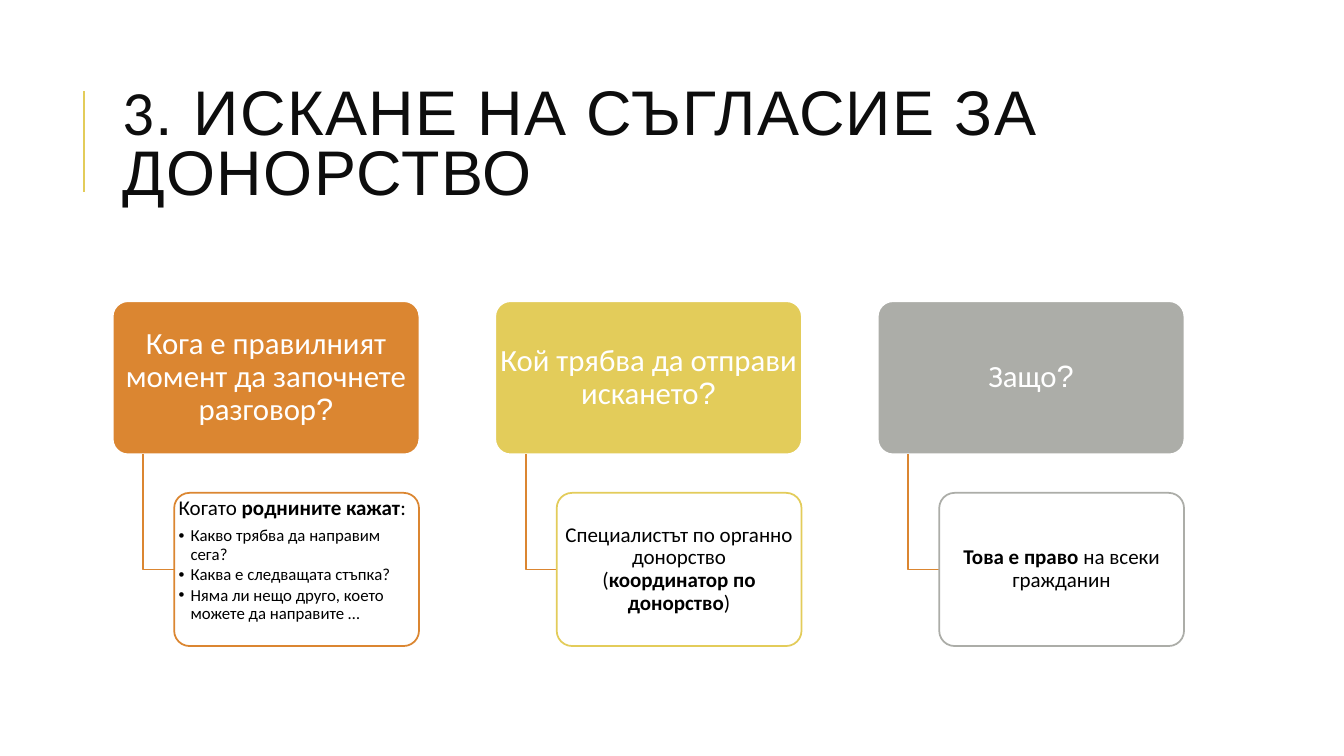
from lxml.etree import SubElement
from pptx import Presentation
from pptx.dml.color import RGBColor
from pptx.enum.shapes import MSO_CONNECTOR as Connector, MSO_SHAPE as Shape
from pptx.enum.text import MSO_ANCHOR as Anchor, PP_ALIGN as Align
from pptx.oxml.ns import qn
from pptx.util import Cm, Pt

ORANGE, YELLOW, GRAY = "DB8631", "E3CC5A", "ACADA8"
WHITE, BLACK, INK = "FFFFFF", "000000", "0D0D0D"
LEFT, PITCH = 2.84, 9.64
HEAD_TOP, HEAD_WIDTH, BOX_HEIGHT = 7.59, 7.73, 3.86
DETAIL_TOP, DETAIL_WIDTH, DETAIL_SHIFT, ELBOW_SHIFT = 12.42, 6.17, 1.55, 0.77

HEAD = {"size": Pt(22), "name": "Calibri"}
HEAD_MARK = {"size": Pt(22), "name": "Arial"}
DETAIL = {"size": Pt(15), "name": "Calibri"}
STRONG = {**DETAIL, "bold": True}
ITEM = {"size": Pt(12), "name": "Calibri"}
CENTERED = {"alignment": Align.CENTER, "line_spacing": 0.9}
INTRO = {"alignment": Align.LEFT, "line_spacing": 0.9, "space_after": Pt(5.25)}
BULLET = {"alignment": Align.LEFT, "line_spacing": 0.9, "space_after": Pt(1.8), "level": 1}

COLUMNS = [
    (ORANGE, "Кога е правилният момент да започнете разговор", Anchor.TOP, [
        (INTRO, [("Когато ", DETAIL), ("роднините кажат", STRONG), (":", DETAIL)]),
        (BULLET, [("Какво трябва да направим сега?", ITEM)]),
        (BULLET, [("Каква е следващата стъпка?", ITEM)]),
        (BULLET, [("Няма ли нещо друго, което можете да направите …", ITEM)]),
    ]),
    (YELLOW, "Кой трябва да отправи искането", Anchor.MIDDLE, [
        (CENTERED, [("Специалистът по органно донорство", DETAIL), ("\n", DETAIL),
                    ("(", DETAIL), ("координатор по донорство", STRONG), (")", DETAIL)]),
    ]),
    (GRAY, "Защо", Anchor.MIDDLE, [
        (CENTERED, [("Това е право ", STRONG), ("на всеки гражданин", DETAIL)]),
    ]),
]


def color(value):
    return RGBColor.from_string(value)


def apply(target, values):
    for name, value in values.items():
        setattr(target, name, value)


def add_bullet(para):
    props = para._p.get_or_add_pPr()
    props.set("marL", str(Cm(0.3)))
    props.set("indent", str(-Cm(0.3)))
    SubElement(props, qn("a:buFont")).set("typeface", "Arial")
    SubElement(props, qn("a:buChar")).set("char", "•")


def write(box, paragraphs, ink, anchor):
    frame = box.text_frame
    apply(frame, {"word_wrap": True, "vertical_anchor": anchor})
    for index, (layout, spans) in enumerate(paragraphs):
        para = frame.add_paragraph() if index else frame.paragraphs[0]
        if layout is BULLET:
            add_bullet(para)
        apply(para, layout)
        for text, style in spans:
            if text == "\n":
                para.add_line_break()
                continue
            span = para.add_run()
            span.text = text
            apply(span.font, style)
            span.font.color.rgb = color(ink)


def add_card(page, left, top, width, fill, line):
    card = page.shapes.add_shape(Shape.ROUNDED_RECTANGLE, Cm(left), Cm(top),
                                 Cm(width), Cm(BOX_HEIGHT))
    card.adjustments[0] = 0.1
    card.shadow.inherit = False
    card.fill.solid()
    card.fill.fore_color.rgb = color(fill)
    card.line.color.rgb = color(line)
    card.line.width = Pt(1.25)
    margins = ("margin_left", "margin_top", "margin_right", "margin_bottom")
    apply(card.text_frame, dict.fromkeys(margins, 0))
    return card


def add_elbow(page, left, top, right, bottom):
    builder = page.shapes.build_freeform(Cm(left), Cm(top))
    builder.add_line_segments([(Cm(left), Cm(bottom)), (Cm(right), Cm(bottom))], close=False)
    elbow = builder.convert_to_shape()
    elbow.shadow.inherit = False
    elbow.fill.background()
    elbow.line.color.rgb = color(ORANGE)
    elbow.line.width = Pt(1.25)


def add_title(page):
    rule = page.shapes.add_connector(Connector.STRAIGHT, Cm(2.12), Cm(4.83), Cm(2.12), Cm(2.3))
    SubElement(rule._element.spPr, qn("a:effectLst"))
    rule.line.color.rgb = color(YELLOW)
    rule.line.width = Pt(1.5)
    box = page.shapes.add_textbox(Cm(2.84), Cm(1.63), Cm(29.85), Cm(4.17))
    spans = [("3", {"size": Pt(45), "name": "Calibri"}),
             (". ИСКАНЕ НА СЪГЛАСИЕ ЗА ДОНОРСТВО", {"size": Pt(45), "name": "Arial"})]
    write(box, [({"line_spacing": 0.8}, spans)], INK, Anchor.MIDDLE)
    for span in box.text_frame.paragraphs[0].runs:
        span.font._element.set("spc", "100")


def add_column(page, left, accent, question, anchor, answer):
    head = add_card(page, left, HEAD_TOP, HEAD_WIDTH, accent, WHITE)
    write(head, [(CENTERED, [(question, HEAD), ("?", HEAD_MARK)])], WHITE, Anchor.MIDDLE)
    add_elbow(page, left + ELBOW_SHIFT, HEAD_TOP + BOX_HEIGHT,
              left + DETAIL_SHIFT, DETAIL_TOP + BOX_HEIGHT / 2)
    detail = add_card(page, left + DETAIL_SHIFT, DETAIL_TOP, DETAIL_WIDTH, WHITE, accent)
    write(detail, answer, BLACK, anchor)


def main():
    deck = Presentation()
    apply(deck, {"slide_width": Cm(33.87), "slide_height": Cm(19.05)})
    page = deck.slides.add_slide(deck.slide_layouts[6])
    add_title(page)
    for index, column in enumerate(COLUMNS):
        add_column(page, LEFT + index * PITCH, *column)
    deck.save("out.pptx")


if __name__ == "__main__":
    main()
